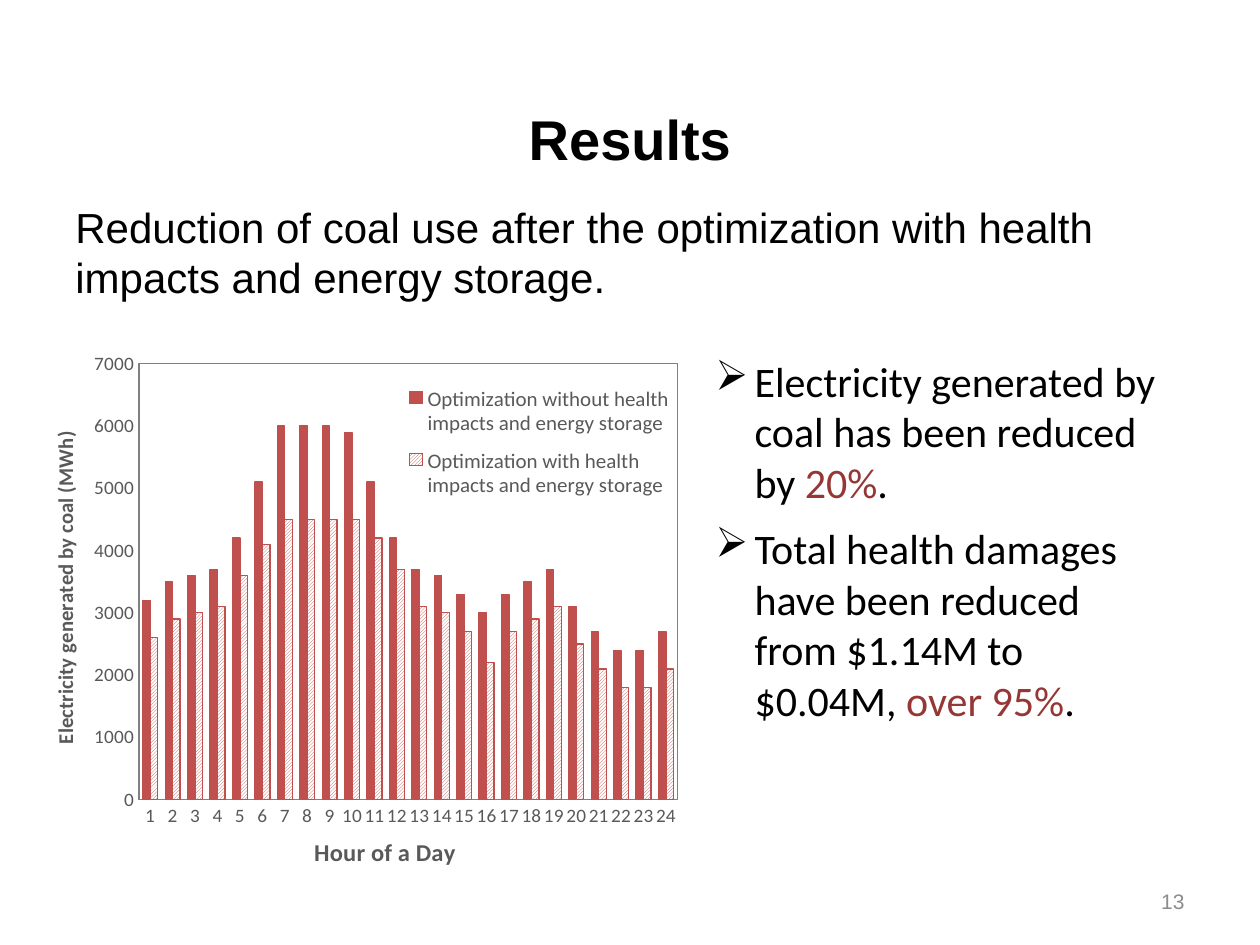
from dataclasses import dataclass

import lxml.etree
import pptx
import pptx.chart.data
import pptx.dml.color
import pptx.enum.chart
import pptx.enum.dml
import pptx.enum.text
import pptx.oxml.ns
import pptx.util

Inches = pptx.util.Inches
Pt = pptx.util.Pt
qn = pptx.oxml.ns.qn
PP_ALIGN = pptx.enum.text.PP_ALIGN


def rgb(code: str) -> pptx.dml.color.RGBColor:
    return pptx.dml.color.RGBColor.from_string(code)


@dataclass(frozen=True)
class Theme:
    heading_font: str = "Arial"
    body_font: str = "Calibri"
    black: str = "000000"
    white: str = "FFFFFF"
    accent: str = "953735"
    bar: str = "C0504D"
    label: str = "595959"
    axis: str = "808080"
    number: str = "8C8C8C"
    title_size: int = 32
    body_size: int = 24
    hour_title_size: int = 14
    small_size: int = 12
    tick_size: int = 11


@dataclass(frozen=True)
class Box:
    left: float
    top: float
    width: float
    height: float

    def inches(self) -> tuple:
        return tuple(Inches(v) for v in (self.left, self.top, self.width, self.height))


@dataclass(frozen=True)
class Finding:
    box: Box
    lead: str
    figure: str


THEME = Theme()

FINDINGS = [
    Finding(Box(5.58, 2.77, 3.82, 1.72),
            "Electricity generated by coal has been reduced by ", "20%"),
    Finding(Box(5.58, 4.1, 3.82, 2.52),
            "Total health damages have been reduced from $1.14M to $0.04M, ", "over 95%"),
]

COAL_MWH = {
    "Optimization without health impacts and energy storage": [
        3200, 3500, 3600, 3700, 4200, 5100, 6000, 6000, 6000, 5900, 5100, 4200,
        3700, 3600, 3300, 3000, 3300, 3500, 3700, 3100, 2700, 2400, 2400, 2700],
    "Optimization with health impacts and energy storage": [
        2600, 2900, 3000, 3100, 3600, 4100, 4500, 4500, 4500, 4500, 4200, 3700,
        3100, 3000, 2700, 2200, 2700, 2900, 3100, 2500, 2100, 1800, 1800, 2100],
}


def style(font, size: float, color: str, name: str, bold: bool = False) -> None:
    font.size, font.name, font.bold = Pt(size), name, bold
    font.color.rgb = rgb(color)


def add_text(slide, box: Box, text: str, size: float, color: str, align=PP_ALIGN.LEFT,
             anchor=pptx.enum.text.MSO_ANCHOR.TOP) -> None:
    frame = slide.shapes.add_textbox(*box.inches()).text_frame
    frame.word_wrap = True
    frame.vertical_anchor = anchor
    frame.text = text
    frame.paragraphs[0].alignment = align
    style(frame.paragraphs[0].runs[0].font, size, color, THEME.heading_font)


def add_finding(slide, finding: Finding) -> None:
    frame = slide.shapes.add_textbox(*finding.box.inches()).text_frame
    frame.word_wrap = True
    paragraph = frame.paragraphs[0]
    properties = paragraph._p.get_or_add_pPr()
    properties.set("marL", str(Inches(0.31)))
    properties.set("indent", str(-Inches(0.31)))
    lxml.etree.SubElement(properties, qn("a:buChar")).set("char", "➢")
    parts = [(finding.lead, THEME.black), (finding.figure, THEME.accent), (".", THEME.black)]
    for text, color in parts:
        run = paragraph.add_run()
        run.text = text
        style(run.font, THEME.body_size, color, THEME.body_font)


def set_layout(element, index: int, inner: bool = False, **fractions: float) -> None:
    """Place a chart part by fractions of the chart; index is the layout's slot in it."""
    for old in element.findall(qn("c:layout")):
        element.remove(old)
    layout = lxml.etree.Element(qn("c:layout"))
    manual = lxml.etree.SubElement(layout, qn("c:manualLayout"))
    settings = {"layoutTarget": "inner"} if inner else {}
    settings.update(xMode="edge", yMode="edge", **fractions)
    for tag, value in settings.items():
        lxml.etree.SubElement(manual, qn(f"c:{tag}")).set("val", str(value))
    element.insert(index, layout)


def format_axis(axis, title: str, title_size: float, x: float, y: float) -> None:
    axis.has_major_gridlines = False
    axis.major_tick_mark = pptx.enum.chart.XL_TICK_MARK.NONE
    style(axis.tick_labels.font, THEME.tick_size, THEME.label, THEME.body_font)
    axis.format.line.color.rgb = rgb(THEME.axis)
    axis.format.line.width = Pt(0.75)
    frame = axis.axis_title.text_frame
    frame.text = title
    style(frame.paragraphs[0].runs[0].font, title_size, THEME.label, THEME.body_font, True)
    set_layout(axis.axis_title._element, 1, x=x, y=y)


def frame_plot(plot_area) -> None:
    """Draw a thin border around the plotting area."""
    properties = lxml.etree.SubElement(plot_area, qn("c:spPr"))
    lxml.etree.SubElement(properties, qn("a:noFill"))
    line = lxml.etree.SubElement(properties, qn("a:ln"), w=str(Pt(0.75)))
    fill = lxml.etree.SubElement(line, qn("a:solidFill"))
    lxml.etree.SubElement(fill, qn("a:srgbClr"), val=THEME.axis)


def add_coal_chart(slide, box: Box) -> None:
    data = pptx.chart.data.CategoryChartData()
    data.categories = [str(hour) for hour in range(1, 25)]
    for name, values in COAL_MWH.items():
        data.add_series(name, values)
    chart = slide.shapes.add_chart(
        pptx.enum.chart.XL_CHART_TYPE.COLUMN_CLUSTERED, *box.inches(), data).chart
    style(chart.font, 10, THEME.black, THEME.body_font)
    chart.has_title = False

    plot = chart.plots[0]
    plot.gap_width, plot.overlap, plot.vary_by_categories = 100, 0, False
    without_storage, with_storage = plot.series
    without_storage.format.fill.solid()
    without_storage.format.fill.fore_color.rgb = rgb(THEME.bar)
    hatch = with_storage.format.fill
    hatch.patterned()
    hatch.pattern = pptx.enum.dml.MSO_PATTERN.LIGHT_UPWARD_DIAGONAL
    hatch.fore_color.rgb, hatch.back_color.rgb = rgb(THEME.bar), rgb(THEME.white)
    for series in plot.series:
        series.format.line.color.rgb = rgb(THEME.bar)
        series.format.line.width = Pt(0.75)

    format_axis(chart.category_axis, "Hour of a Day", THEME.hour_title_size, 0.42, 0.93)
    format_axis(chart.value_axis, "Electricity generated by coal (MWh)",
                THEME.small_size, 0.02, 0.17)
    chart.value_axis.minimum_scale, chart.value_axis.maximum_scale = 0, 7000
    chart.value_axis.major_unit = 1000

    chart.has_legend = True
    chart.legend.position = pptx.enum.chart.XL_LEGEND_POSITION.BOTTOM
    chart.legend.include_in_layout = False
    style(chart.legend.font, THEME.small_size, THEME.label, THEME.body_font)
    set_layout(chart.legend._element, 1, x=0.55, y=0.06, w=0.44, h=0.26)

    plot_area = chart._chartSpace.chart.plotArea
    set_layout(plot_area, 0, inner=True, x=0.16, y=0.04, w=0.82, h=0.83)
    frame_plot(plot_area)


def main() -> None:
    deck = pptx.Presentation()
    deck.slide_width, deck.slide_height = Inches(10), Inches(7.5)
    slide = deck.slides.add_slide(deck.slide_layouts[5])

    title = slide.shapes.title
    title.left, title.top, title.width, title.height = Box(0.35, 0.51, 9.3, 1.17).inches()
    title.text_frame.text = "Results"
    title.text_frame.vertical_anchor = pptx.enum.text.MSO_ANCHOR.MIDDLE
    heading = title.text_frame.paragraphs[0]
    heading.alignment = PP_ALIGN.CENTER
    style(heading.runs[0].font, THEME.title_size, THEME.black, THEME.heading_font, True)

    add_coal_chart(slide, Box(0.27, 2.72, 5.21, 4.23))
    add_text(slide, Box(7.17, 6.95, 2.33, 0.4), "13", THEME.small_size, THEME.number,
             PP_ALIGN.RIGHT, pptx.enum.text.MSO_ANCHOR.MIDDLE)
    add_text(slide, Box(0.5, 1.55, 9, 1.17),
             "Reduction of coal use after the optimization with health impacts "
             "and energy storage.", THEME.body_size, THEME.black)
    for finding in FINDINGS:
        add_finding(slide, finding)
    deck.save("out.pptx")


if __name__ == "__main__":
    main()
